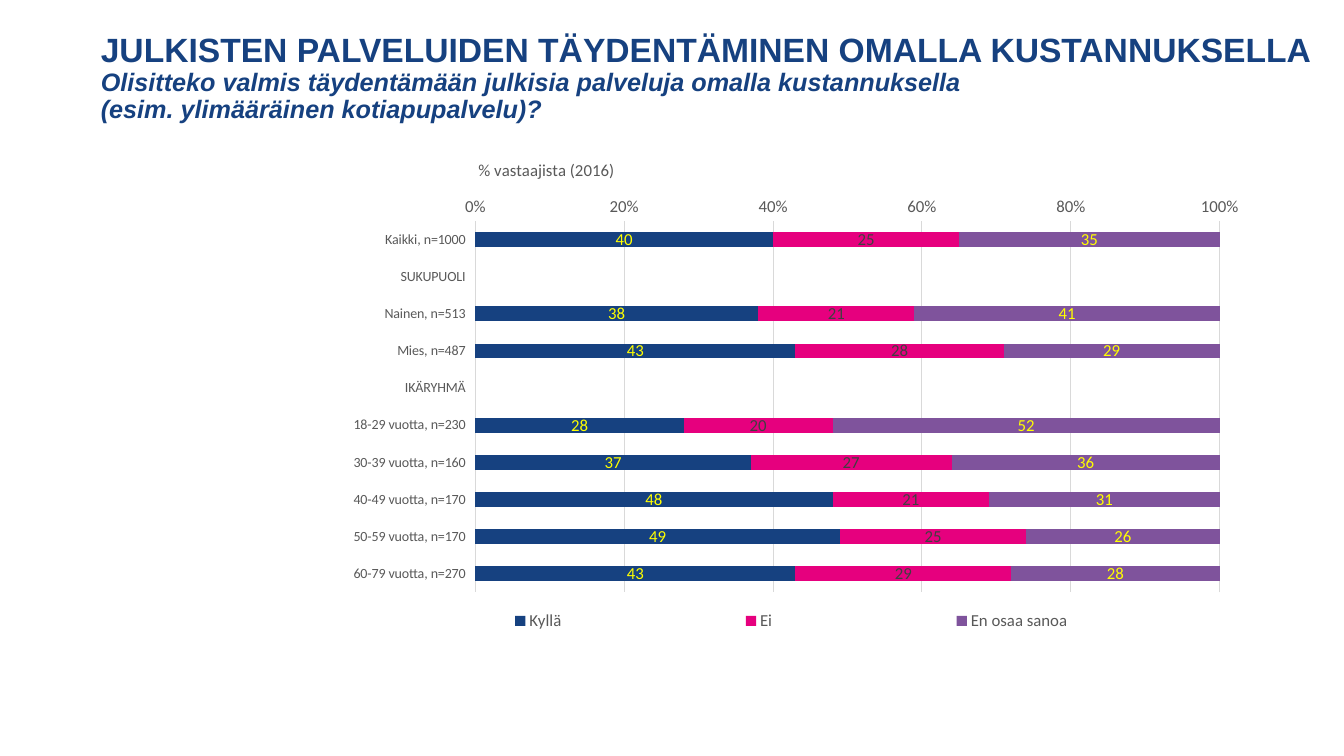
from copy import deepcopy

from lxml import etree
from pptx import Presentation
from pptx.chart.data import CategoryChartData
from pptx.dml.color import RGBColor
from pptx.enum.chart import (XL_AXIS_CROSSES, XL_CHART_TYPE, XL_LABEL_POSITION,
                             XL_LEGEND_POSITION, XL_TICK_LABEL_POSITION, XL_TICK_MARK)
from pptx.enum.text import MSO_ANCHOR, MSO_AUTO_SIZE, PP_ALIGN
from pptx.oxml.ns import qn
from pptx.util import Inches, Pt

STACKED = XL_CHART_TYPE.BAR_STACKED_100
BOTTOM = XL_LEGEND_POSITION.BOTTOM
CENTER = XL_LABEL_POSITION.CENTER
LOW = XL_TICK_LABEL_POSITION.LOW
NO_TICK = XL_TICK_MARK.NONE
MAXIMUM = XL_AXIS_CROSSES.MAXIMUM
MIDDLE = MSO_ANCHOR.MIDDLE
NO_FIT = MSO_AUTO_SIZE.NONE
LEFT = PP_ALIGN.LEFT

WIDTH, HEIGHT = 13.33, 7.5
NAVY, PINK, PURPLE = "164180", "E6007E", "7F539C"
GREY, DARK, PALE, YELLOW = "595959", "404040", "D9D9D9", "FFFF00"

TITLE_BOX = (0.9, 0.19, 12.27, 1.18)
CHART_BOX = (0.92, 1.5, 11.5, 4.88)
PLOT_SHARES = {"x": 0.33, "y": 0.142, "w": 0.642, "h": 0.755}
CAPTION_SHARES = {"x": 0.33, "y": 0.01}
LEGEND_SHARES = {"x": 0.21, "y": 0.92, "w": 0.785, "h": 0.07}

HEADING = "JULKISTEN PALVELUIDEN TÄYDENTÄMINEN OMALLA KUSTANNUKSELLA"
QUESTION = ("Olisitteko valmis täydentämään julkisia palveluja omalla kustannuksella",
            "(esim. ylimääräinen kotiapupalvelu)?")
CAPTION = "% vastaajista (2016)"
GROUPS = ("Kaikki, n=1000", "SUKUPUOLI", "Nainen, n=513", "Mies, n=487", "IKÄRYHMÄ",
          "18-29 vuotta, n=230", "30-39 vuotta, n=160", "40-49 vuotta, n=170",
          "50-59 vuotta, n=170", "60-79 vuotta, n=270")
ANSWERS = (
    ("Kyllä", NAVY, YELLOW, (40, None, 38, 43, None, 28, 37, 48, 49, 43)),
    ("Ei", PINK, DARK, (25, None, 21, 28, None, 20, 27, 21, 25, 29)),
    ("En osaa sanoa", PURPLE, YELLOW, (35, None, 41, 29, None, 52, 36, 31, 26, 28)),
)


def color(code):
    return RGBColor.from_string(code)


def apply(target, values):
    for name, value in values.items():
        setattr(target, name, value)


def style_font(font, size, code, name="Calibri", bold=False, italic=False):
    apply(font, {"size": Pt(size), "name": name, "bold": bold, "italic": italic})
    font.color.rgb = color(code)


def style_line(line, code):
    line.width = Pt(0.75)
    line.color.rgb = color(code)


def set_layout(element, shares, inner=False):
    layout = element.find(qn("c:layout"))
    if layout is None:
        layout = etree.Element(qn("c:layout"))
        before = element.find(qn("c:overlay"))
        if before is None:
            element.insert(0, layout)
        else:
            before.addprevious(layout)
    for child in list(layout):
        layout.remove(child)
    manual = etree.SubElement(layout, qn("c:manualLayout"))
    entries = [("layoutTarget", "inner")] if inner else []
    entries += [("xMode", "edge"), ("yMode", "edge"), *shares.items()]
    for tag, value in entries:
        etree.SubElement(manual, qn(f"c:{tag}")).set("val", str(value))


def add_heading(page, box):
    title = page.shapes.title
    apply(title, dict(zip(("left", "top", "width", "height"), map(Inches, box))))
    frame = title.text_frame
    apply(frame, {"word_wrap": True, "auto_size": NO_FIT, "vertical_anchor": MIDDLE})
    para = frame.paragraphs[0]
    apply(para, {"alignment": LEFT, "line_spacing": 0.9})
    lines = [(HEADING, 24, False)] + [(text, 18, True) for text in QUESTION]
    for index, (text, size, italic) in enumerate(lines):
        if index:
            para.add_line_break()
            span_format = para.runs[-1].font._element
            para._p.findall(qn("a:br"))[-1].append(deepcopy(span_format))
        span = para.add_run()
        span.text = text
        style_font(span.font, size, NAVY, "Arial", True, italic)


def style_axes(chart):
    groups, scale = chart.category_axis, chart.value_axis
    for axis, size in ((groups, 10), (scale, 12)):
        apply(axis, {"major_tick_mark": NO_TICK, "minor_tick_mark": NO_TICK})
        style_font(axis.tick_labels.font, size, GREY)
    apply(groups, {"reverse_order": True, "tick_label_position": LOW})
    style_line(groups.format.line, PALE)
    apply(scale, {"minimum_scale": 0, "maximum_scale": 1, "major_unit": 0.2,
                  "has_major_gridlines": True, "crosses": MAXIMUM})
    apply(scale.tick_labels, {"number_format": "0%", "number_format_is_linked": False})
    scale.format.line.fill.background()
    style_line(scale.major_gridlines.format.line, PALE)


def add_answers(page, box):
    data = CategoryChartData()
    data.categories = GROUPS
    for name, _, _, values in ANSWERS:
        data.add_series(name, values)
    chart = page.shapes.add_chart(STACKED, *map(Inches, box), data).chart
    style_font(chart.font, 10, "000000")
    style_axes(chart)

    plot = chart.plots[0]
    apply(plot, {"gap_width": 150, "overlap": 100, "vary_by_categories": False})
    for series, (_, fill, label, _) in zip(plot.series, ANSWERS):
        series.format.fill.solid()
        series.format.fill.fore_color.rgb = color(fill)
        labels = series.data_labels
        apply(labels, {"show_value": True, "position": CENTER})
        style_font(labels.font, 12, label)

    chart.has_title = True
    caption = chart.chart_title
    span = caption.text_frame.paragraphs[0].add_run()
    span.text = CAPTION
    style_font(span.font, 12, GREY)

    chart.has_legend = True
    apply(chart.legend, {"position": BOTTOM, "include_in_layout": False})
    style_font(chart.legend.font, 12, GREY)

    set_layout(caption._element, CAPTION_SHARES)
    set_layout(chart.legend._element, LEGEND_SHARES)
    set_layout(chart._chartSpace.find(".//" + qn("c:plotArea")), PLOT_SHARES, True)


def main():
    deck = Presentation()
    apply(deck, {"slide_width": Inches(WIDTH), "slide_height": Inches(HEIGHT)})
    page = deck.slides.add_slide(deck.slide_layouts[5])
    add_heading(page, TITLE_BOX)
    add_answers(page, CHART_BOX)
    deck.save("out.pptx")


if __name__ == "__main__":
    main()
